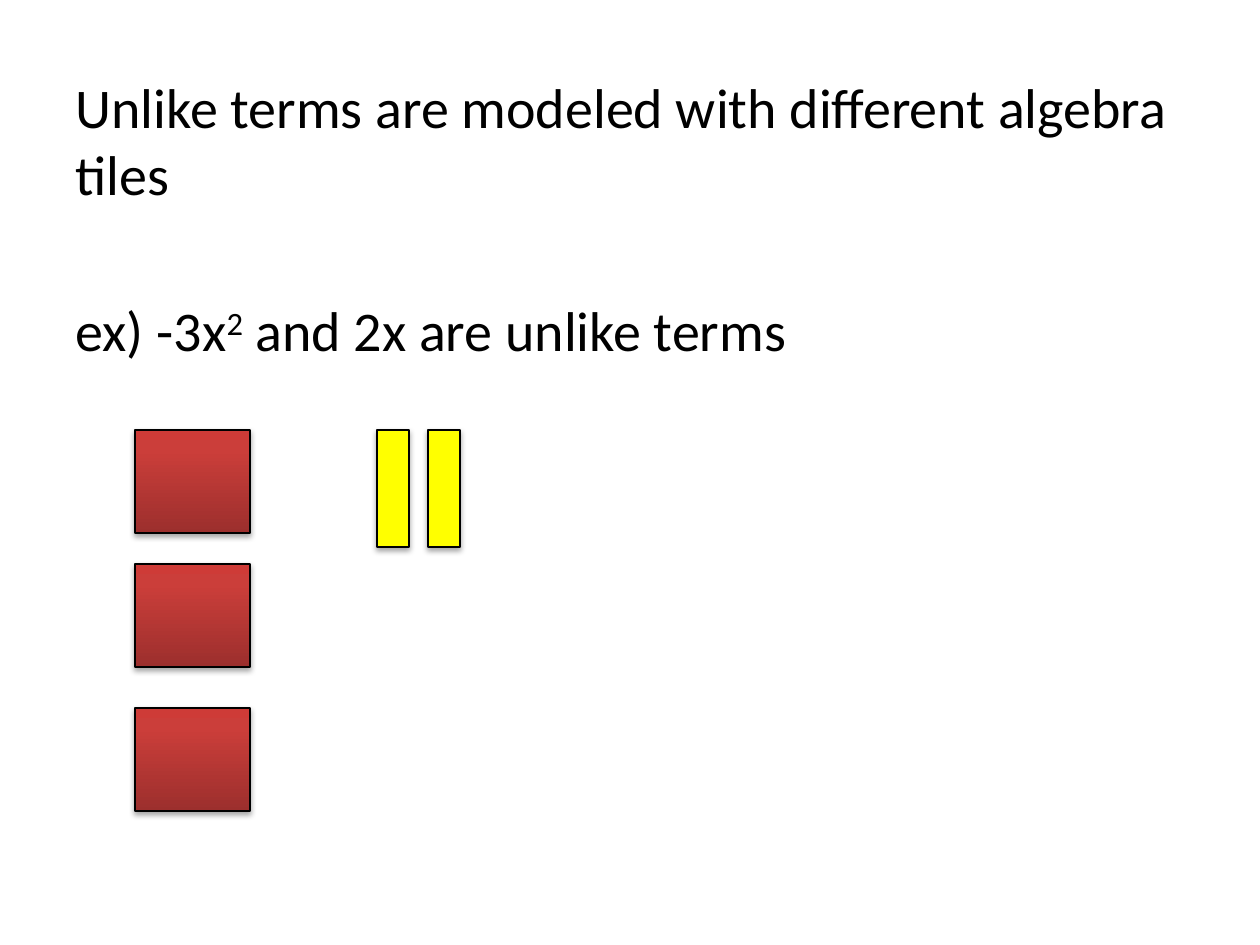
from copy import deepcopy

from lxml import etree
from pptx import Presentation
from pptx.dml.color import RGBColor
from pptx.enum.shapes import MSO_SHAPE
from pptx.oxml.ns import qn
from pptx.util import Pt

RECT = MSO_SHAPE.RECTANGLE
SCALE = 914400 / 126
FONT = {"name": "Calibri", "size": Pt(32)}
SHADE = {"blurRad": "40000", "dist": "23000", "dir": "5400000", "rotWithShape": "0"}
RED = [(0, "9C2F2D"), (0.8, "CB3E3A"), (1, "CE3B37")]
YELLOW = "FFFF00"
BLACK = "000000"


def px(num):
    """Turn px into EMU."""
    return round(num * SCALE)


def tint(color, code):
    """Set a colour from a hex string."""
    color.rgb = RGBColor.from_string(code)


def style(item, values):
    """Set attributes from a dict."""
    for key, value in values.items():
        setattr(item, key, value)


def place(item, left, top, width, height):
    """Move and size an item."""
    box = {"left": left, "top": top, "width": width, "height": height}
    style(item, {key: px(num) for key, num in box.items()})


def add_text(par, runs):
    """Fill a plain paragraph with (text, raise) runs."""
    props = par._p.get_or_add_pPr()
    props.set("marL", "0")
    props.set("indent", "0")
    etree.SubElement(props, qn("a:buNone"))
    for text, lift in runs:
        run = par.add_run()
        run.text = text
        style(run.font, FONT)
        tint(run.font.color, BLACK)
        if lift:
            run.font._element.set("baseline", str(lift * 1000))


def add_shade(shape):
    """Give a shape a soft shadow below."""
    shape.shadow.inherit = False
    effects = shape._element.spPr.find(qn("a:effectLst"))
    outer = etree.SubElement(effects, qn("a:outerShdw"), SHADE)
    color = etree.SubElement(outer, qn("a:srgbClr"), val=BLACK)
    etree.SubElement(color, qn("a:alpha"), val="35000")


def fade(fill, shape, stops):
    """Fill a shape with a gradient that runs upward."""
    fill.gradient()
    fill.gradient_angle = 90
    group = shape._element.spPr.find(".//" + qn("a:gsLst"))
    while len(group) < len(stops):
        group.append(deepcopy(group[0]))
    for stop, (pos, code) in zip(fill.gradient_stops, stops):
        stop.position = pos
        tint(stop.color, code)


def add_tile(slide, box, paint):
    """Add an algebra tile in a plain or graded colour."""
    tile = slide.shapes.add_shape(RECT, *map(px, box))
    if isinstance(paint, str):
        tile.fill.solid()
        tint(tile.fill.fore_color, paint)
    else:
        fade(tile.fill, tile, paint)
    tint(tile.line.color, BLACK)
    tile.line.width = Pt(0.75)
    add_shade(tile)


def main():
    """Build the slide."""
    deck = Presentation()
    style(deck, {"slide_width": px(1260), "slide_height": px(945)})
    slide = deck.slides.add_slide(deck.slide_layouts[1])
    title = slide.shapes.title._element
    title.getparent().remove(title)
    body = slide.placeholders[1]
    place(body, 63, 66, 1134, 624)
    frame = body.text_frame
    add_text(frame.paragraphs[0],
             [("Unlike terms are modeled with different algebra tiles", 0)])
    last = frame.add_paragraph()
    last.space_before = Pt(51)
    add_text(last, [("ex) -3x", 0), ("2", 30), (" and 2x are unlike terms", 0)])
    for top in (430, 564, 708):
        add_tile(slide, (135, top, 115, 103), RED)
    for left in (377, 428):
        add_tile(slide, (left, 430, 32, 117), YELLOW)
    deck.save("out.pptx")


if __name__ == "__main__":
    main()
